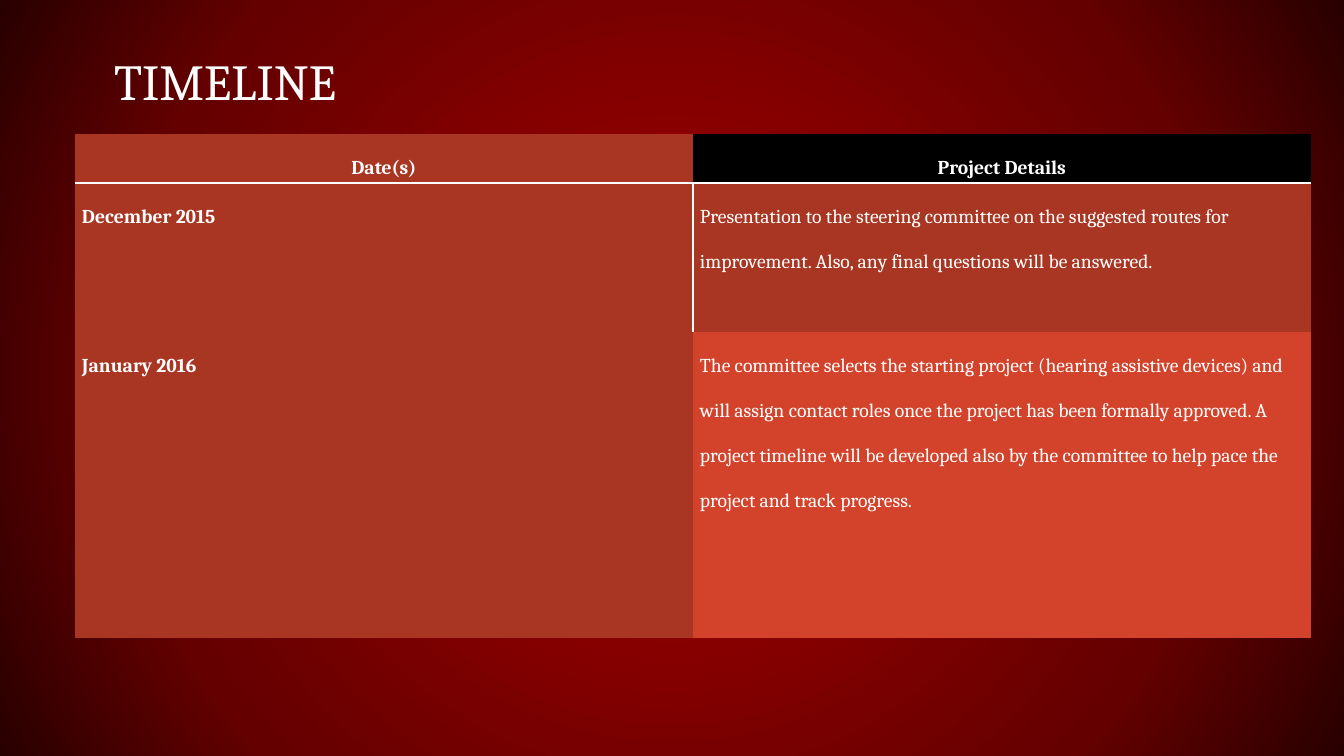
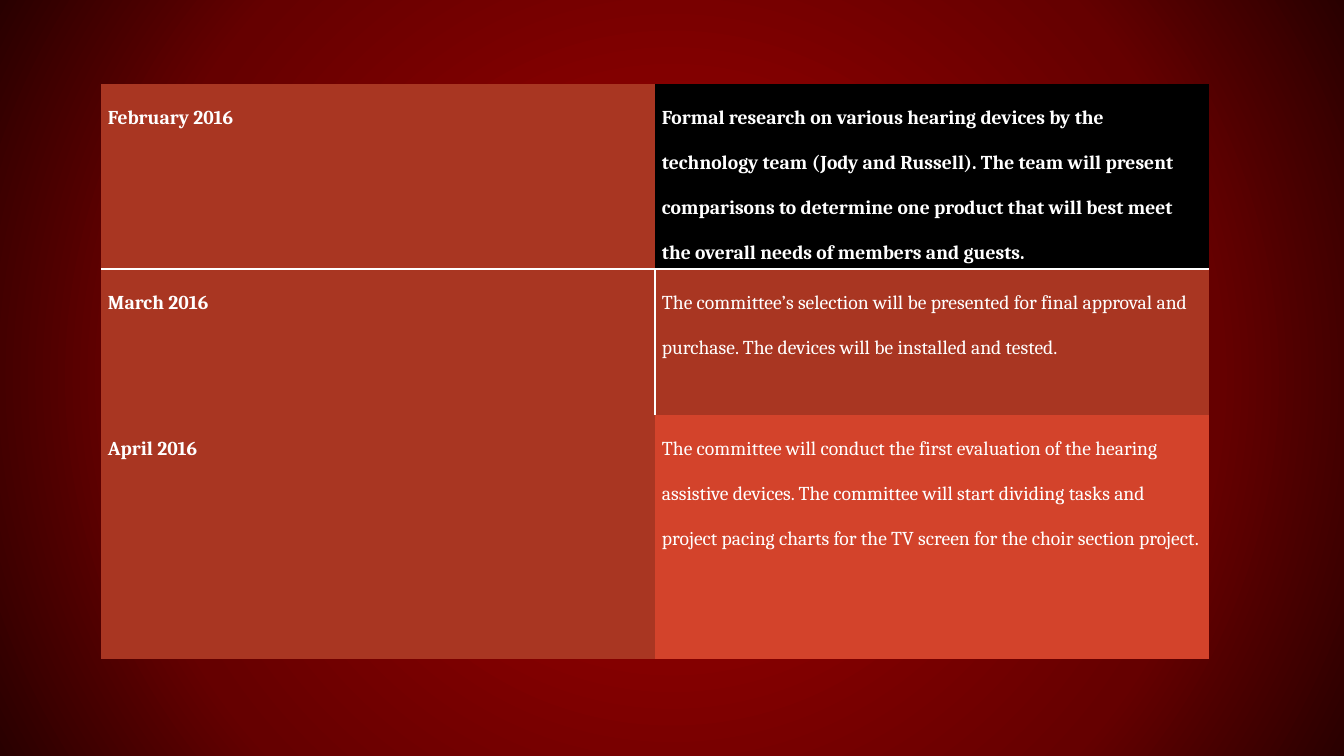
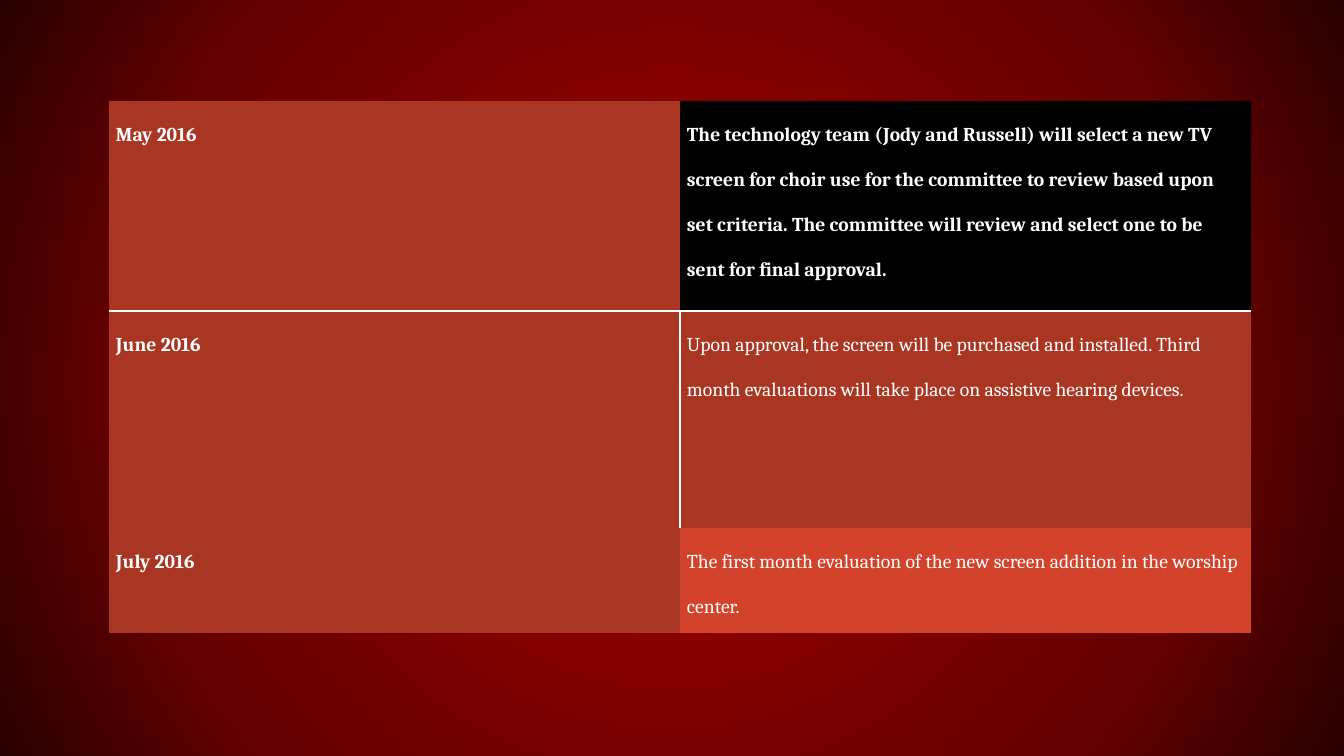
from pptx import Presentation, oxml, util as u
from pptx.dml.color import RGBColor
from pptx.enum import text as t
from pptx.oxml.ns import nsdecls, qn

WHITE = RGBColor(0xFF, 0xFF, 0xFF)
BLACK = RGBColor(0, 0, 0)
RUST = RGBColor(0xA9, 0x36, 0x22)
RED = RGBColor(0xD3, 0x43, 0x2B)
GLOW = [(17, RGBColor(0x96, 0, 0)), (71, RGBColor(0x65, 0, 0)), (100, RGBColor(0x29, 0, 0))]
FILLS = [(RUST, BLACK), (RUST, RUST), (RUST, RED)]
FONT = "Cambria"
PLAIN = "{2D5ABB26-0587-4C30-8999-92F81FD0307C}"
PX = 12192000 / 1344
LEFT, MID = t.PP_ALIGN.LEFT, t.PP_ALIGN.CENTER


def px(n):
    return u.Emu(round(n * PX))


def write(frame, words, size=14, bold=False, align=LEFT, gap=2.0, pad=(7, 0)):
    frame.word_wrap = True
    frame.margin_left = frame.margin_right = px(pad[0])
    frame.margin_top = frame.margin_bottom = px(pad[1])
    para = frame.paragraphs[0]
    para.alignment = align
    para.line_spacing = gap
    run = para.add_run()
    run.text = words
    run.font.name = FONT
    run.font.size = u.Pt(size)
    run.font.bold = bold
    run.font.color.rgb = WHITE


pages = [
    dict(title="TIMELINE", left=75, top=134, wide=618, rows=[49, 149, 306], head=MID, cells=[
        ("Date(s)", "Project Details"),
        ("December 2015", "Presentation to the steering committee on the suggested routes for "
         "improvement. Also, any final questions will be answered."),
        ("January 2016", "The committee selects the starting project (hearing assistive devices) "
         "and will assign contact roles once the project has been formally approved. A project "
         "timeline will be developed also by the committee to help pace the project and track "
         "progress.")]),
    dict(title=None, left=101, top=84, wide=554, rows=[185, 146, 244], head=LEFT, cells=[
        ("February 2016", "Formal research on various hearing devices by the technology team "
         "(Jody and Russell). The team will present comparisons to determine one product that "
         "will best meet the overall needs of members and guests."),
        ("March 2016", "The committee’s selection will be presented for final approval and "
         "purchase. The devices will be installed and tested."),
        ("April 2016", "The committee will conduct the first evaluation of the hearing assistive "
         "devices. The committee will start dividing tasks and project pacing charts for the TV "
         "screen for the choir section project.")]),
    dict(title=None, left=109, top=101, wide=571, rows=[210, 217, 105], head=LEFT, cells=[
        ("May 2016", "The technology team (Jody and Russell) will select a new TV screen for "
         "choir use for the committee to review based upon set criteria. The committee will "
         "review and select one to be sent for final approval."),
        ("June 2016", "Upon approval, the screen will be purchased and installed. Third month "
         "evaluations will take place on assistive hearing devices."),
        ("July 2016", "The first month evaluation of the new screen addition in the worship "
         "center.")]),
]

deck = Presentation()
deck.slide_width, deck.slide_height = px(1344), px(756)

master = deck.slide_master
master.background.fill.solid()
back = master.element.xpath(".//p:bgPr")[0]
stops = "".join(f'<a:gs pos="{pos * 1000}"><a:srgbClr val="{tone}"/></a:gs>' for pos, tone in GLOW)
back.replace(back[0], oxml.parse_xml(
    f'<a:gradFill {nsdecls("a")} rotWithShape="1"><a:gsLst>{stops}</a:gsLst><a:path path="circle">'
    '<a:fillToRect l="50000" t="50000" r="50000" b="50000"/></a:path></a:gradFill>'))

for page in pages:
    slide = deck.slides.add_slide(deck.slide_layouts[5 if page["title"] else 6])
    if page["title"]:
        title = slide.shapes.title
        title.left, title.top, title.width, title.height = px(101), px(34), px(1142), px(83)
        frame = title.text_frame
        write(frame, page["title"], size=36, gap=0.8, pad=(13, 7))
        frame.vertical_anchor = t.MSO_ANCHOR.BOTTOM
        frame.auto_size = t.MSO_AUTO_SIZE.NONE

    wide, rows = page["wide"], page["rows"]
    table = slide.shapes.add_table(3, 2, px(page["left"]), px(page["top"]),
                                   px(2 * wide), px(sum(rows))).table
    table.horz_banding = False
    table._tbl.tblPr.find(qn("a:tableStyleId")).text = PLAIN
    for col in table.columns:
        col.width = px(wide)
    for r, pair in enumerate(page["cells"]):
        table.rows[r].height = px(rows[r])
        for c, words in enumerate(pair):
            cell = table.cell(r, c)
            write(cell.text_frame, words, bold=r == 0 or c == 0,
                  align=page["head"] if r == 0 else LEFT)
            cell.margin_left = cell.margin_right = px(7)
            cell.margin_top = cell.margin_bottom = 0
            cell.fill.solid()
            cell.fill.fore_color.rgb = FILLS[r][c]
            side = "lnB" if r == 0 else "lnR" if (r, c) == (1, 0) else None
            if side:
                cell._tc.tcPr.insert(0, oxml.parse_xml(
                    f'<a:{side} {nsdecls("a")} w="{u.Pt(2)}"><a:solidFill>'
                    f'<a:srgbClr val="{WHITE}"/></a:solidFill></a:{side}>'))

deck.save("out.pptx")
